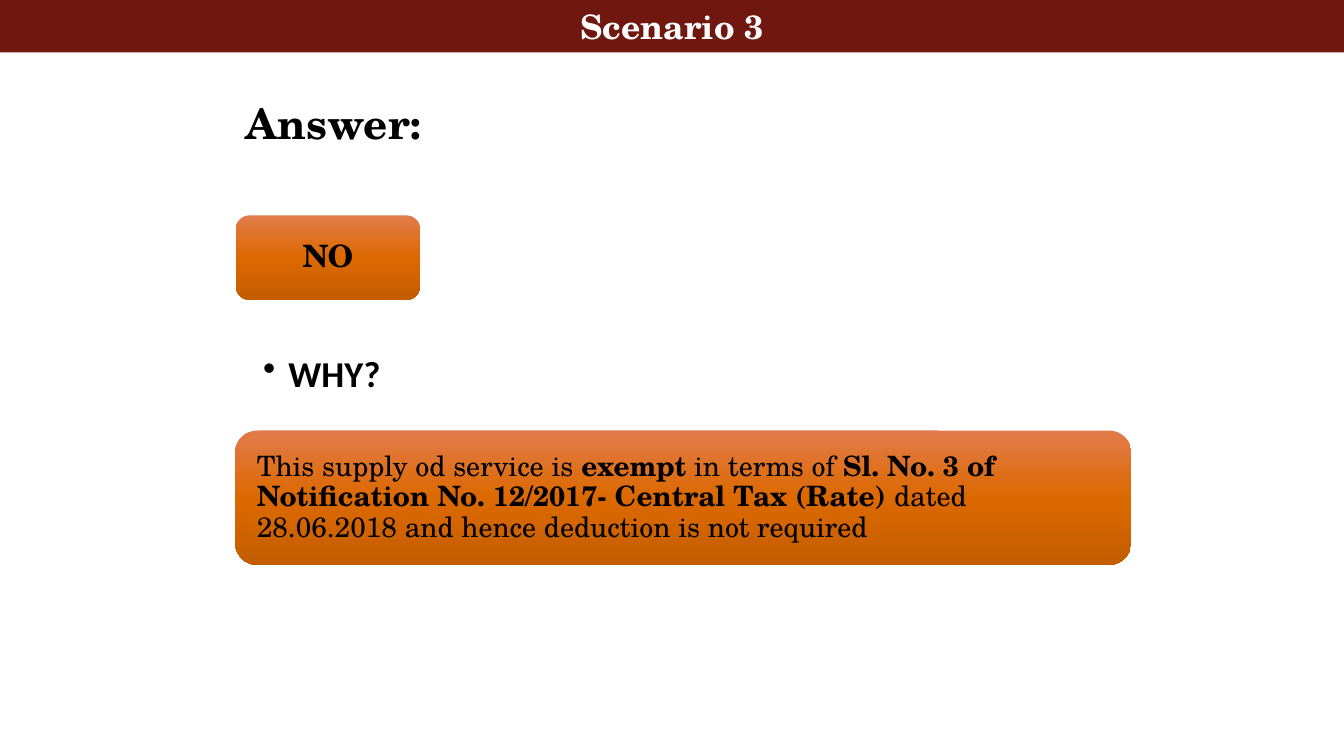
from copy import deepcopy

from lxml import etree
from pptx import Presentation
from pptx.dml.color import RGBColor
from pptx.enum.shapes import MSO_SHAPE
from pptx.enum.text import MSO_ANCHOR, PP_ALIGN
from pptx.oxml.ns import qn
from pptx.util import Pt

RECT = MSO_SHAPE.RECTANGLE
ROUND = MSO_SHAPE.ROUNDED_RECTANGLE
TOP, MIDDLE = MSO_ANCHOR.TOP, MSO_ANCHOR.MIDDLE
LEFT, CENTER = PP_ALIGN.LEFT, PP_ALIGN.CENTER
COLORS = {"black": "000000", "white": "FFFFFF", "bar": "70180F"}
ORANGE_STOPS = [(0, "E27B4B"), (0.5, "DC6900"), (1, "C35D00")]
SERIF, SANS = "TeX Gyre Schola", "Calibri"


def add_run(p, text, *, size, bold=False, font=SERIF, color="black"):
    r = p.add_run()
    r.text = text
    r.font.name = font
    r.font.size = Pt(size)
    r.font.bold = bold
    r.font.color.rgb = RGBColor.from_string(COLORS[color])


class SlideBuilder:
    def __init__(self, prs):
        self.s = prs.slides.add_slide(prs.slide_layouts[6])

    def set_text(self, sp, runs, *, align=LEFT, anchor=MIDDLE,
                 insets=(7.2, 3.6), spacing=0.9, bullet=False, **style):
        tf = sp.text_frame
        tf.word_wrap = True
        tf.vertical_anchor = anchor
        tf.margin_left = tf.margin_right = Pt(insets[0])
        tf.margin_top = tf.margin_bottom = Pt(insets[1])
        p = tf.paragraphs[0]
        p.alignment = align
        p.line_spacing = spacing
        if bullet:
            pPr = p._p.get_or_add_pPr()
            pPr.set("marL", str(Pt(18)))
            pPr.set("indent", str(-Pt(18)))
            etree.SubElement(pPr, qn("a:buChar")).set("char", "•")
        for text, bold in runs:
            add_run(p, text, bold=bold, **style)

    def text(self, box, runs, **style):
        sp = self.s.shapes.add_textbox(*map(Pt, box))
        self.set_text(sp, runs, **style)

    def shape(self, kind, box):
        sp = self.s.shapes.add_shape(kind, *map(Pt, box))
        sp.shadow.inherit = False
        sp.line.fill.background()
        return sp

    def bar(self, box, runs, **style):
        sp = self.shape(RECT, box)
        sp.fill.solid()
        sp.fill.fore_color.rgb = RGBColor.from_string(COLORS["bar"])
        self.set_text(sp, runs, **style)

    def card(self, box, runs, **style):
        sp = self.shape(ROUND, box)
        fill = sp.fill
        fill.gradient()
        fill.gradient_angle = 270
        gs_list = sp._element.spPr.find(".//" + qn("a:gsLst"))
        gs_list.append(deepcopy(gs_list[-1]))
        for stop, (position, color) in zip(fill.gradient_stops, ORANGE_STOPS):
            stop.position = position
            stop.color.rgb = RGBColor.from_string(color)
        self.set_text(sp, runs, **style)


def main():
    prs = Presentation()
    prs.slide_width, prs.slide_height = Pt(960), Pt(540)
    b = SlideBuilder(prs)
    b.text((168.5, 37.4, 780, 104.4), [("Answer:", True)], size=30)
    b.card((168.5, 153.8, 131.5, 60.5), [("NO", True)], size=22, align=CENTER)
    b.text((168, 251.3, 640, 50), [("WHY?", True)], size=26, font=SANS,
           anchor=TOP, insets=(20, 2.9), bullet=True)
    b.card((168, 307.5, 640, 96), [
        ("This supply od service is ", False),
        ("exempt", True),
        (" in terms of ", False),
        ("Sl. No. 3 of Notification No. 12/2017- Central Tax (Rate)", True),
        (" dated 28.06.2018 and hence deduction is not required", False),
    ], size=20, insets=(10.8, 10.8))
    b.bar((0, 0, 960, 37.4), [("Scenario 3", True)], size=24, color="white",
          align=CENTER, insets=(0, 4.3), spacing=1.0)
    prs.save("out.pptx")


if __name__ == "__main__":
    main()
